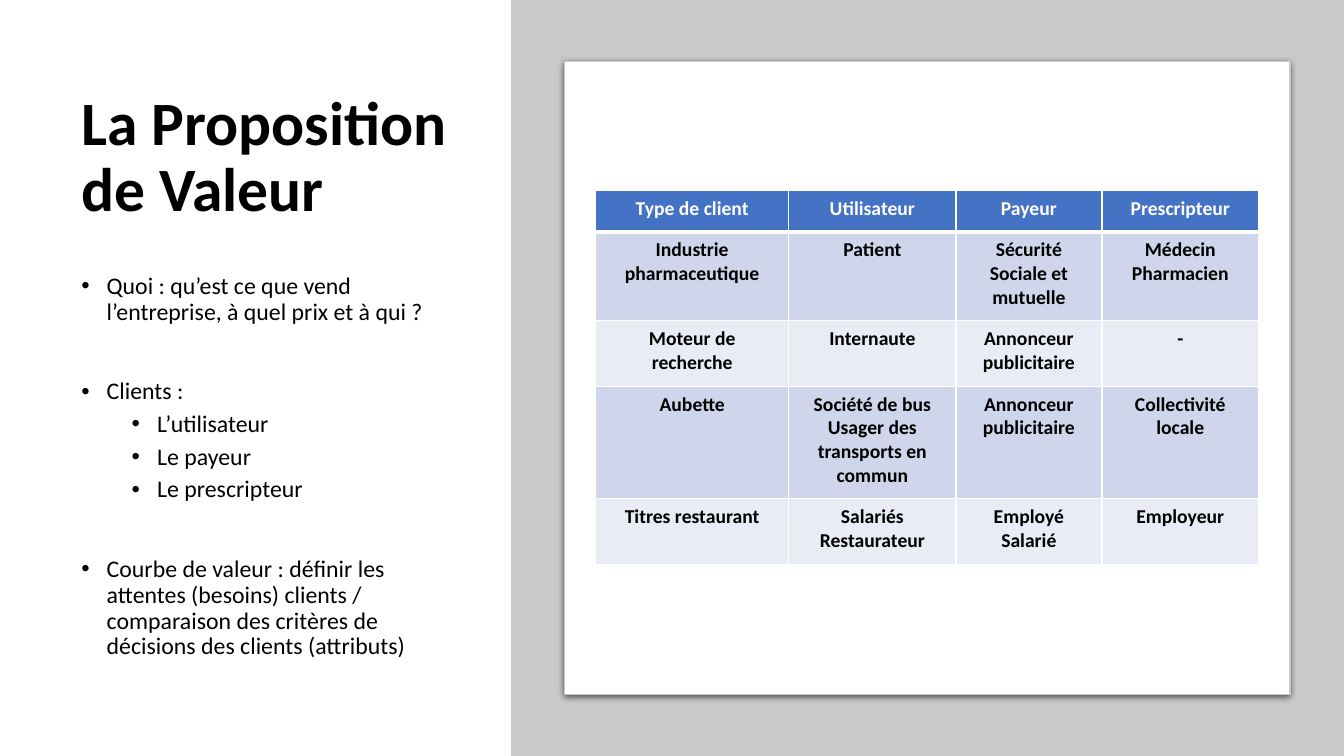
from lxml import etree
from pptx import Presentation
from pptx import util as u
from pptx.dml.color import RGBColor
from pptx.enum import shapes, text
from pptx.oxml import parse_xml
from pptx.oxml.ns import nsdecls, qn

FONT = "Calibri"
COLORS = {"ink": "000000", "paper": "FFFFFF", "panel": "C8CACA",
          "header": "4472C4", "odd": "CFD5EA", "even": "E9EBF5"}
BULLETS = [
    (0, 10, "Quoi : qu’est ce que vend l’entreprise, à quel prix et à qui ?"),
    (0, 38.5, "Clients :"),
    (1, 5, "L’utilisateur"),
    (1, 5, "Le payeur"),
    (1, 5, "Le prescripteur"),
    (0, 38.5, "Courbe de valeur : définir les attentes (besoins) clients / "
              "comparaison des critères de décisions des clients (attributs)"),
]
CLIENTS = [
    ["Type de client", "Utilisateur", "Payeur", "Prescripteur"],
    ["Industrie pharmaceutique", "Patient", "Sécurité Sociale et mutuelle",
     "Médecin\nPharmacien"],
    ["Moteur de recherche", "Internaute", "Annonceur publicitaire", "-"],
    ["Aubette", "Société de bus\nUsager des transports en commun",
     "Annonceur publicitaire", "Collectivité locale"],
    ["Titres restaurant", "Salariés\nRestaurateur", "Employé\nSalarié", "Employeur"],
]
COLUMN_WIDTHS = [4.87, 4.21, 3.68, 3.95]
ROW_HEIGHTS = [1.04, 2.24, 1.65, 2.84, 1.65]


def color(name):
    """Return the named palette colour."""
    return RGBColor.from_string(COLORS[name])


def style(paragraph, size, ink="ink", bold=False):
    """Set the font of a whole paragraph."""
    paragraph.font.name = FONT
    paragraph.font.size = u.Pt(size)
    paragraph.font.bold = bold
    paragraph.font.color.rgb = color(ink)


def add_title(slide, left, top, width, height):
    """Place and format the slide title."""
    title = slide.shapes.title
    title.left, title.top, title.width, title.height = map(u.Cm, (left, top, width, height))
    frame = title.text_frame
    frame.text = "La Proposition de Valeur"
    frame.word_wrap = True
    frame.auto_size = text.MSO_AUTO_SIZE.NONE
    frame.vertical_anchor = text.MSO_ANCHOR.MIDDLE
    paragraph = frame.paragraphs[0]
    paragraph.alignment = text.PP_ALIGN.LEFT
    paragraph.line_spacing = 0.9
    style(paragraph, 44, bold=True)


def add_bullets(slide, left, top, width, height):
    """Write the two-level bullet list."""
    frame = slide.shapes.add_textbox(*map(u.Cm, (left, top, width, height))).text_frame
    frame.word_wrap = True
    for index, (level, space, wording) in enumerate(BULLETS):
        paragraph = frame.add_paragraph() if index else frame.paragraphs[0]
        paragraph.text = wording
        paragraph.level = level
        paragraph.line_spacing = 0.9
        paragraph.space_before = u.Pt(space)
        style(paragraph, 17)
        properties = paragraph._p.get_or_add_pPr()
        properties.set("marL", str(u.Cm(0.64 + 1.27 * level)))
        properties.set("indent", str(u.Cm(-0.64)))
        etree.SubElement(properties, qn("a:buFont")).set("typeface", "Arial")
        etree.SubElement(properties, qn("a:buChar")).set("char", "•")
        properties.append(properties.find(qn("a:defRPr")))


def add_block(slide, kind, fill, left, top, width, height):
    """Add a plain filled shape without a line or shadow."""
    shape = slide.shapes.add_shape(kind, *map(u.Cm, (left, top, width, height)))
    shape.shadow.inherit = False
    shape.fill.solid()
    shape.fill.fore_color.rgb = color(fill)
    shape.line.fill.background()
    return shape


def add_card(slide, left, top, width, height):
    """Add the white card with its soft shadow."""
    card = add_block(slide, shapes.MSO_SHAPE.ROUNDED_RECTANGLE, "paper",
                     left, top, width, height)
    card.adjustments[0] = 0
    card.line.color.rgb = color("panel")
    card.line.width = u.Pt(0.75)
    card._element.spPr.find(qn("a:effectLst")).append(parse_xml(
        f'<a:outerShdw {nsdecls("a")} blurRad="{u.Pt(4.5)}" dist="{u.Pt(1.5)}" '
        f'dir="5400000" algn="t" rotWithShape="0"><a:srgbClr val="{COLORS["ink"]}">'
        '<a:alpha val="63000"/></a:srgbClr></a:outerShdw>'))


def set_borders(cell, widths):
    """Draw white borders in the order left, right, top, bottom."""
    properties = cell._tc.get_or_add_tcPr()
    for index, (side, width) in enumerate(zip("LRTB", widths)):
        properties.insert(index, parse_xml(
            f'<a:ln{side} {nsdecls("a")} w="{u.Pt(width)}"><a:solidFill>'
            f'<a:srgbClr val="{COLORS["paper"]}"/></a:solidFill></a:ln{side}>'))


def add_client_table(slide, left, top):
    """Add the table of client types."""
    box = (left, top, sum(COLUMN_WIDTHS), sum(ROW_HEIGHTS))
    table = slide.shapes.add_table(len(CLIENTS), len(CLIENTS[0]), *map(u.Cm, box)).table
    for column, width in zip(table.columns, COLUMN_WIDTHS):
        column.width = u.Cm(width)
    for row, height in zip(table.rows, ROW_HEIGHTS):
        row.height = u.Cm(height)
    for row, wordings in enumerate(CLIENTS):
        fill = "header" if row == 0 else "odd" if row % 2 else "even"
        for column, wording in enumerate(wordings):
            cell = table.cell(row, column)
            cell.text = wording
            cell.margin_left = cell.margin_right = u.Cm(0.33)
            cell.margin_top = cell.margin_bottom = u.Cm(0.16)
            cell.fill.solid()
            cell.fill.fore_color.rgb = color(fill)
            set_borders(cell, (1, 1, 3 if row == 1 else 1, 1 if row else 3))
            for paragraph in cell.text_frame.paragraphs:
                paragraph.alignment = text.PP_ALIGN.CENTER
                style(paragraph, 14, "ink" if row else "paper", bold=True)


def main():
    """Build and save the slide."""
    presentation = Presentation()
    presentation.slide_width = u.Cm(33.87)
    presentation.slide_height = u.Cm(19.05)
    slide = presentation.slides.add_slide(presentation.slide_layouts[5])
    add_title(slide, 1.8, 1.75, 9.73, 4.5)
    add_bullets(slide, 1.8, 6.78, 9.73, 10.52)
    add_block(slide, shapes.MSO_SHAPE.RECTANGLE, "panel", 12.88, 0, 20.99, 19.05)
    add_card(slide, 14.22, 1.55, 18.29, 15.95)
    add_client_table(slide, 15.01, 4.8)
    presentation.save("out.pptx")


if __name__ == "__main__":
    main()
